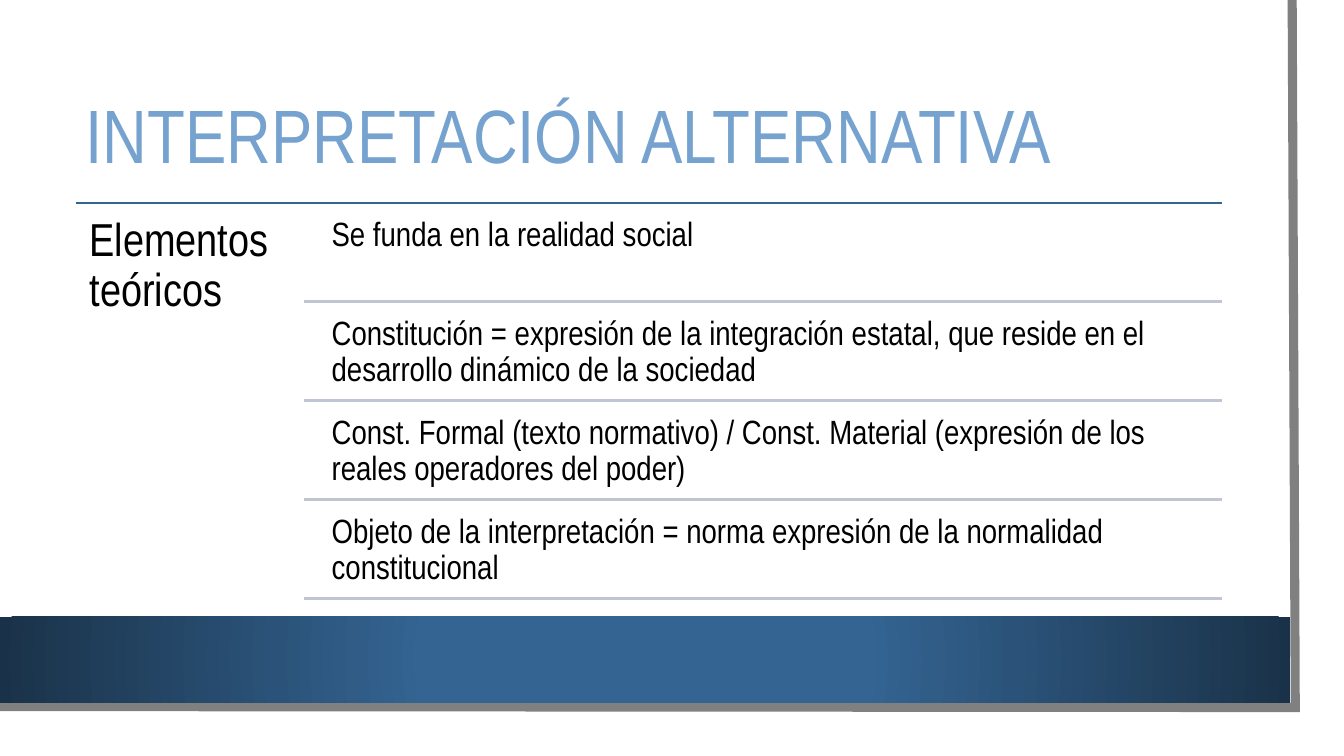
from dataclasses import dataclass

from lxml import etree
from pptx import Presentation
from pptx.dml.color import RGBColor
from pptx.enum.shapes import MSO_CONNECTOR, MSO_SHAPE
from pptx.enum.text import MSO_ANCHOR
from pptx.oxml import parse_xml
from pptx.oxml.ns import qn
from pptx.util import Pt

RECT = MSO_SHAPE.RECTANGLE
STRAIGHT = MSO_CONNECTOR.STRAIGHT
TOP = MSO_ANCHOR.TOP
MIDDLE = MSO_ANCHOR.MIDDLE
SPACE = "http://schemas.openxmlformats.org/drawingml/2006/main"


@dataclass(frozen=True)
class Theme:
    font: str = "Arial Narrow"
    white: str = "FFFFFF"
    black: str = "000000"
    title: str = "75A2CE"
    blue: str = "346492"
    navy: str = "1A3249"
    rule: str = "BFC6D2"
    edge: str = "808080"
    head_size: float = 54
    side_size: float = 33
    body_size: float = 24
    rule_width: float = 1.5
    edge_width: float = 6.5


class Painter:
    def __init__(self, slide, theme):
        self.shapes = slide.shapes
        self.theme = theme

    def panel(self, left, top, width, height, color):
        shape = self.shapes.add_shape(RECT, Pt(left), Pt(top), Pt(width), Pt(height))
        shape.shadow.inherit = False
        shape.fill.solid()
        shape.fill.fore_color.rgb = RGBColor.from_string(color)
        shape.line.fill.background()
        return shape

    def glow(self, left, top, width, height, inner, outer):
        shape = self.panel(left, top, width, height, inner)
        solid = shape._element.spPr.find(qn("a:solidFill"))
        solid.getparent().replace(solid, parse_xml(
            f'<a:gradFill xmlns:a="{SPACE}" rotWithShape="1"><a:gsLst>'
            f'<a:gs pos="34000"><a:srgbClr val="{inner}"/></a:gs>'
            f'<a:gs pos="100000"><a:srgbClr val="{outer}"/></a:gs></a:gsLst>'
            '<a:path path="circle"><a:fillToRect l="50000" t="50000" '
            'r="50000" b="50000"/></a:path></a:gradFill>'))

    def outline(self, points, color, width):
        start, *rest = [(Pt(x), Pt(y)) for x, y in points]
        pen = self.shapes.build_freeform(*start)
        pen.add_line_segments(rest, close=False)
        shape = pen.convert_to_shape()
        shape.shadow.inherit = False
        shape.fill.background()
        shape.line.color.rgb = RGBColor.from_string(color)
        shape.line.width = Pt(width)
        line = shape._element.spPr.find(qn("a:ln"))
        etree.SubElement(line, qn("a:miter"), lim="800000")

    def rule(self, left, right, y, color):
        line = self.shapes.add_connector(STRAIGHT, Pt(left), Pt(y), Pt(right), Pt(y))
        line.line.color.rgb = RGBColor.from_string(color)
        line.line.width = Pt(self.theme.rule_width)
        etree.SubElement(line._element.spPr, qn("a:effectLst"))

    def text(self, words, left, top, width, height, size, color,
             inset=(7.2, 7.2), anchor=TOP):
        box = self.shapes.add_textbox(Pt(left), Pt(top), Pt(width), Pt(height))
        frame = box.text_frame
        frame.word_wrap = True
        frame.vertical_anchor = anchor
        frame.margin_left = frame.margin_right = Pt(inset[0])
        frame.margin_top = frame.margin_bottom = Pt(inset[1])
        para = frame.paragraphs[0]
        para.text = words
        para.line_spacing = 0.9
        para.font.name = self.theme.font
        para.font.size = Pt(size)
        para.font.color.rgb = RGBColor.from_string(color)


def main():
    deck = Presentation()
    deck.slide_width, deck.slide_height = Pt(960), Pt(540)
    theme = Theme()
    paint = Painter(deck.slides.add_slide(deck.slide_layouts[6]), theme)

    paint.panel(0, 0, 943.2, 523.4, theme.white)
    paint.outline([(923, 0), (925.2, 505.4), (-2.2, 504.7)],
                  theme.edge, theme.edge_width)
    paint.glow(0, 440.6, 921.6, 61.4, theme.blue, theme.navy)

    left, right, top = 54, 872.6, 144.7
    paint.text("INTERPRETACIÓN ALTERNATIVA", left, 54, right - left, 90.7,
               theme.head_size, theme.title, inset=(7.2, 3.6), anchor=MIDDLE)
    paint.rule(left, right, top, theme.blue)
    paint.text("Elementos teóricos", left, top, 163.5, 286.6,
               theme.side_size, theme.black, inset=(10, 10))

    items = [
        "Se funda en la realidad social",
        "Constitución = expresión de la integración estatal, que reside en el "
        "desarrollo dinámico de la sociedad",
        "Const. Formal (texto normativo) / Const. Material (expresión de los "
        "reales operadores del poder)",
        "Objeto de la interpretación = norma expresión de la normalidad "
        "constitucional",
    ]
    row, gap = 67.2, 3.5
    for index, words in enumerate(items):
        y = top + gap + index * (row + gap)
        paint.text(words, 229.8, y, right - 229.8, row,
                   theme.body_size, theme.black)
        paint.rule(217.5, right, y + row, theme.rule)

    deck.save("out.pptx")


if __name__ == "__main__":
    main()
